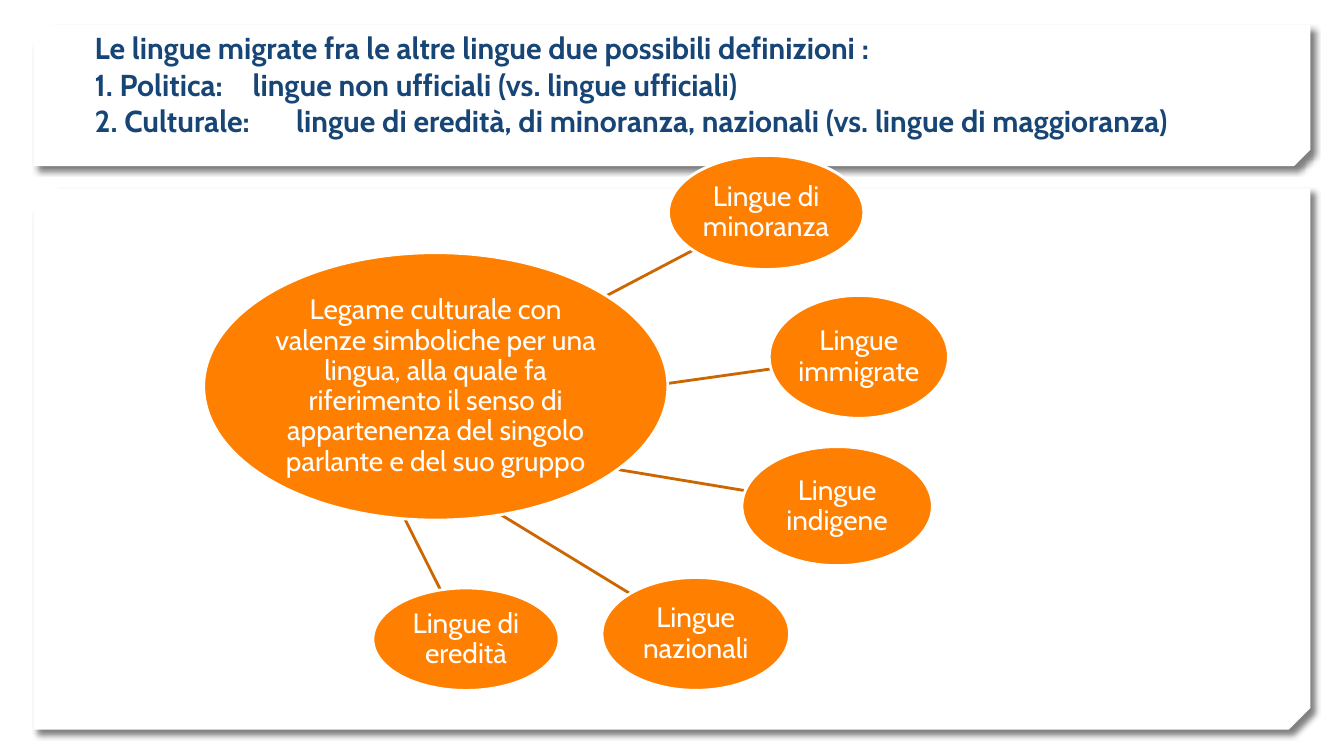
"""Build a slide that links migrant languages to their cultural definition."""
from lxml import etree
from pptx import Presentation
from pptx.dml.color import RGBColor
from pptx.enum.shapes import MSO_CONNECTOR, MSO_SHAPE
from pptx.enum.text import MSO_ANCHOR, PP_ALIGN
from pptx.oxml import parse_xml
from pptx.oxml.ns import qn
from pptx.util import Pt

TITLE_LINES = [
    "Le lingue migrate fra le altre lingue due possibili definizioni :",
    "1. Politica:\t lingue non ufficiali (vs. lingue ufficiali)",
    "2. Culturale: \tlingue di eredità, di minoranza, nazionali (vs. lingue di maggioranza)",
]
TITLE_BOX = (60.5, 21, 890, 81.5)
PANELS = [((24, 134.6, 912, 386.6), 0.04), ((24, 18, 912, 100.8), 0.117)]
HUB_TEXT = (
    "Legame culturale con valenze simboliche per una lingua, alla quale fa "
    "riferimento il senso di appartenenza del singolo parlante e del suo gruppo"
)
HUB_BOX = (145.5, 180.5, 331.5, 191)
LANGUAGES = [
    ("Lingue di minoranza", (477.5, 111, 139.5, 81.5), (290, 286.5), (495.5, 178.5)),
    ("Lingue immigrate", (549.5, 211, 128, 87.8), (290, 300.2), (551, 263.5)),
    ("Lingue indigene", (530, 319, 136, 85), (290, 310.3), (533, 350.6)),
    ("Lingue nazionali", (430, 412.5, 134, 80.6), (290, 326.2), (450, 424)),
    ("Lingue di eredità", (266.4, 420, 133, 73.2), (273.6, 339.8), (314.6, 421.2)),
]

FONT = "Cabin"
WHITE = RGBColor(0xFF, 0xFF, 0xFF)
NAVY = RGBColor(0x17, 0x45, 0x76)
ORANGE = RGBColor(0xFF, 0x7F, 0x01)
RUST = RGBColor(0xCC, 0x66, 0x01)
SHADOW = (
    '<a:outerShdw xmlns:a="http://schemas.openxmlformats.org/drawingml/2006/main" '
    'blurRad="50800" dist="63500" dir="2700000" algn="tl" rotWithShape="0">'
    '<a:srgbClr val="000000"><a:alpha val="50000"/></a:srgbClr></a:outerShdw>'
)


def points(values):
    return [Pt(value) for value in values]


def format_runs(paragraph, size, color, bold=False):
    for run in paragraph.runs:
        run.font.name = FONT
        run.font.size = Pt(size)
        run.font.bold = bold
        run.font.color.rgb = color


def add_panel(slide, box, snip):
    shape = slide.shapes.add_shape(MSO_SHAPE.SNIP_2_DIAG_RECTANGLE, *points(box))
    shape.adjustments[0] = 0
    shape.adjustments[1] = snip
    shape.fill.solid()
    shape.fill.fore_color.rgb = WHITE
    shape.line.fill.background()
    shape.shadow.inherit = False
    properties = shape.element.spPr
    properties.find(qn("a:xfrm")).set("flipV", "1")
    properties.find(qn("a:effectLst")).append(parse_xml(SHADOW))


def add_title(slide):
    frame = slide.shapes.add_textbox(*points(TITLE_BOX)).text_frame
    frame.word_wrap = True
    frame.vertical_anchor = MSO_ANCHOR.BOTTOM
    frame.text = "\v".join(TITLE_LINES)
    format_runs(frame.paragraphs[0], 21.6, NAVY, bold=True)


def add_link(slide, start, end):
    connector = slide.shapes.add_connector(
        MSO_CONNECTOR.STRAIGHT, *points(start + end))
    connector.line.color.rgb = RUST
    connector.line.width = Pt(2)
    etree.SubElement(connector.element.spPr, qn("a:effectLst"))


def add_bubble(slide, text, box):
    shape = slide.shapes.add_shape(MSO_SHAPE.OVAL, *points(box))
    shape.shadow.inherit = False
    shape.fill.solid()
    shape.fill.fore_color.rgb = ORANGE
    shape.line.color.rgb = WHITE
    shape.line.width = Pt(2)
    frame = shape.text_frame
    frame.word_wrap = True
    frame.vertical_anchor = MSO_ANCHOR.MIDDLE
    frame.margin_left = frame.margin_right = Pt(0.9)
    frame.margin_top = frame.margin_bottom = Pt(0.9)
    frame.text = text
    paragraph = frame.paragraphs[0]
    paragraph.alignment = PP_ALIGN.CENTER
    paragraph.line_spacing = 0.9
    format_runs(paragraph, 20, WHITE)


def main():
    presentation = Presentation()
    presentation.slide_width, presentation.slide_height = points((960, 540))
    slide = presentation.slides.add_slide(presentation.slide_layouts[6])
    for box, snip in PANELS:
        add_panel(slide, box, snip)
    add_title(slide)
    for _, _, start, end in LANGUAGES:
        add_link(slide, start, end)
    for text, box, _, _ in LANGUAGES:
        add_bubble(slide, text, box)
    add_bubble(slide, HUB_TEXT, HUB_BOX)
    presentation.save("out.pptx")


if __name__ == "__main__":
    main()
